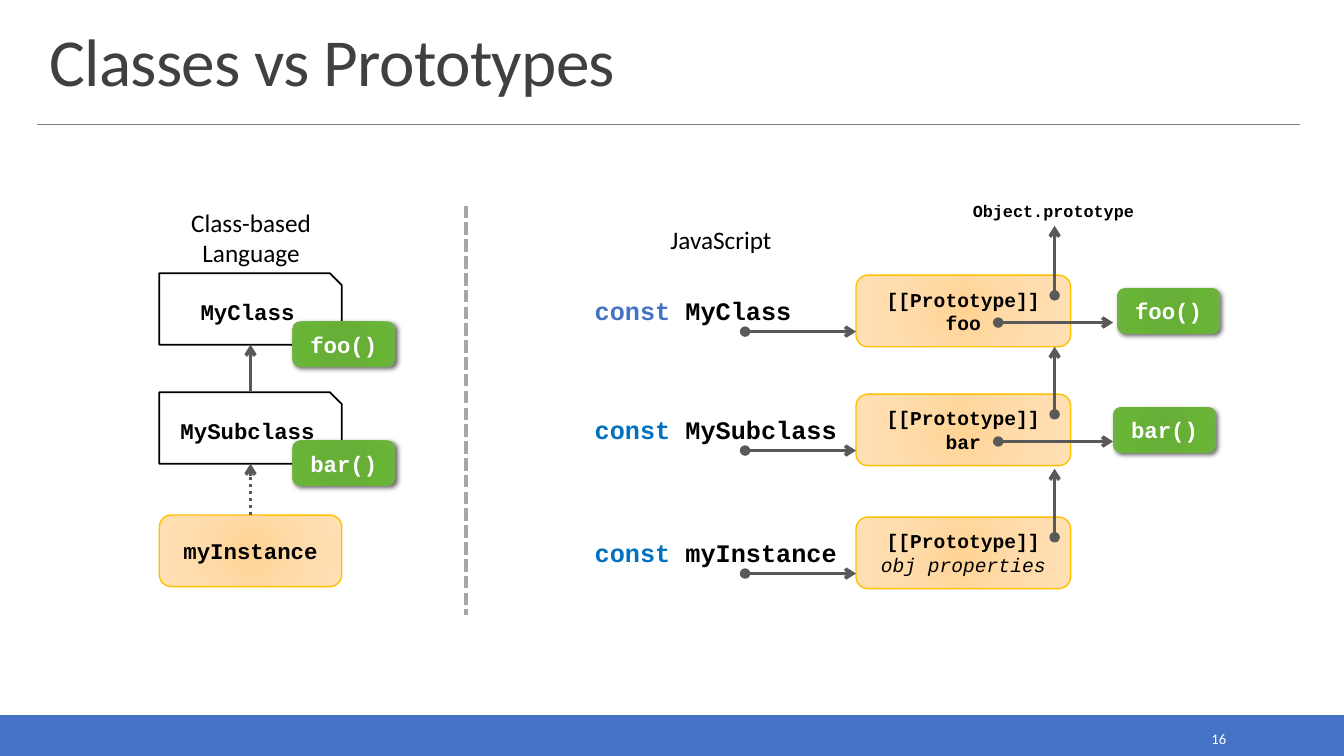
"""Builds a slide that compares classes with prototypes."""
from pptx import Presentation
from pptx.dml.color import RGBColor
from pptx.enum.dml import MSO_LINE_DASH_STYLE as DASH
from pptx.enum.shapes import MSO_CONNECTOR, MSO_SHAPE as SHAPE
from pptx.enum.text import MSO_ANCHOR as ANCHOR, MSO_AUTO_SIZE as FIT, PP_ALIGN as ALIGN
from pptx.oxml import parse_xml
from pptx.oxml.ns import nsdecls, qn
from pptx.util import Inches, Pt
from lxml.etree import SubElement

WIDTH, HEIGHT = 13.33, 7.5
COL = {"class": 1.58, "badge": 2.9, "divider": 4.62, "name": 5.8,
       "ref": 7.39, "object": 8.49, "slot": 9.9, "proto": 10.46, "method": 11.04}
ROWS = (2.71, 3.89, 5.11)
BOX_H, CLASS_W, OBJECT_W = 0.71, 1.81, 2.13
BADGE_W, BADGE_H = 1.02, 0.45

BLUE = RGBColor(0x44, 0x72, 0xC4)
KEYWORD = RGBColor(0x00, 0x70, 0xC0)
GOLD = RGBColor(0xFF, 0xC0, 0x00)
WHITE = RGBColor(0xFF, 0xFF, 0xFF)
BLACK = RGBColor(0x00, 0x00, 0x00)
TITLE = RGBColor(0x40, 0x40, 0x40)
ARROW = RGBColor(0x59, 0x59, 0x59)
RULE = RGBColor(0x80, 0x80, 0x80)
DIVIDER = RGBColor(0xA6, 0xA6, 0xA6)
ORANGE_STOPS = ((0, RGBColor(0xFF, 0xD3, 0x93)), (45, RGBColor(0xFF, 0xDB, 0xA9)),
                (100, RGBColor(0xFF, 0xDF, 0xB4)))
GREEN_STOPS = ((0, RGBColor(0x66, 0xAF, 0x34)), (34, RGBColor(0x67, 0xAF, 0x37)),
               (70, RGBColor(0x68, 0xB4, 0x35)), (100, RGBColor(0x6F, 0xB2, 0x42)))

SANS = {"name": "Calibri", "size": 18, "color": BLACK}
CODE = {"name": "Courier New", "size": 16, "bold": True, "color": BLACK}


def style_font(font, fmt):
    for key, value in fmt.items():
        if key == "color":
            font.color.rgb = value
        else:
            setattr(font, key, Pt(value) if key == "size" else value)


def write(sp, paragraphs, fmt, align=ALIGN.LEFT, **frame):
    """Fill a frame; each paragraph lists (text, format changes) runs."""
    tf = sp.text_frame
    for key, value in frame.items():
        setattr(tf, key, value)
    for i, runs in enumerate(paragraphs):
        p = tf.add_paragraph() if i else tf.paragraphs[0]
        p.alignment = align
        for text, changes in runs:
            if text == "\n":
                p.add_line_break()
                continue
            r = p.add_run()
            r.text = text
            style_font(r.font, fmt | changes)
    return tf


def add_label(s, box, paragraphs, fmt, align=ALIGN.LEFT, **frame):
    frame = frame or {"word_wrap": False, "auto_size": FIT.SHAPE_TO_FIT_TEXT}
    return write(s.shapes.add_textbox(*map(Inches, box)), paragraphs, fmt, align, **frame)


def add_box(s, kind, box, fill=None, line=None, weight=1.25):
    sp = s.shapes.add_shape(kind, *map(Inches, box))
    sp.shadow.inherit = False
    if fill is not None:
        sp.fill.solid()
        sp.fill.fore_color.rgb = fill
    if line is None:
        sp.line.fill.background()
    else:
        sp.line.color.rgb = line
        sp.line.width = Pt(weight)
    return sp


def add_glow(sp, stops):
    """Give the shape a circular gradient."""
    marks = "".join(f'<a:gs pos="{pos * 1000}"><a:srgbClr val="{color}"/></a:gs>'
                    for pos, color in stops)
    edge = " ".join(f'{side}="100000"' for side in "ltrb")
    grad = parse_xml(f'<a:gradFill {nsdecls("a")} rotWithShape="1"><a:gsLst>{marks}</a:gsLst>'
                     f'<a:path path="circle"><a:fillToRect {edge}/></a:path></a:gradFill>')
    sp.element.spPr.find(qn("a:prstGeom")).addnext(grad)


def add_shadow(sp):
    effects = sp.element.spPr.find(qn("a:effectLst"))
    effects.append(parse_xml(
        f'<a:outerShdw {nsdecls("a")} blurRad="{Pt(3.5)}" dist="{Pt(2)}" dir="2700000" '
        'algn="tl" rotWithShape="0"><a:srgbClr val="000000"><a:alpha val="60000"/>'
        '</a:srgbClr></a:outerShdw>'))


def add_line(s, start, end, color=ARROW, weight=2.5, dash=None, head=None, tail=None):
    c = s.shapes.add_connector(MSO_CONNECTOR.STRAIGHT, *map(Inches, start + end))
    c.line.color.rgb = color
    c.line.width = Pt(weight)
    if dash:
        c.line.dash_style = dash
    spPr = c.element.spPr
    for tag, kind in (("a:headEnd", head), ("a:tailEnd", tail)):
        if kind:
            SubElement(spPr.find(qn("a:ln")), qn(tag), type=kind)
    SubElement(spPr, qn("a:effectLst"))


def add_pointer(s, start, end):
    add_line(s, start, end, head="oval", tail="arrow")


def add_class(s, top, name):
    sp = add_box(s, SHAPE.SNIP_1_RECTANGLE, (COL["class"], top, CLASS_W, BOX_H), WHITE, BLACK)
    write(sp, [[(name, {})]], CODE, ALIGN.CENTER, vertical_anchor=ANCHOR.MIDDLE)


def add_object(s, left, top, width, paragraphs, size):
    sp = add_box(s, SHAPE.ROUNDED_RECTANGLE, (left, top, width, BOX_H), line=GOLD, weight=1)
    add_glow(sp, ORANGE_STOPS)
    write(sp, paragraphs, CODE | {"size": size}, ALIGN.CENTER, vertical_anchor=ANCHOR.MIDDLE)


def add_method(s, left, top, name):
    sp = add_box(s, SHAPE.ROUNDED_RECTANGLE, (left, top, BADGE_W, BADGE_H))
    add_glow(sp, GREEN_STOPS)
    add_shadow(sp)
    write(sp, [[(name, {})]], CODE | {"color": WHITE}, ALIGN.CENTER,
          vertical_anchor=ANCHOR.MIDDLE)


def add_layout(s):
    """Draw the title, its rule and the footer band."""
    add_box(s, SHAPE.RECTANGLE, (0, 7.1, WIDTH, 0.4), BLUE, BLUE)
    add_line(s, (0.37, 1.23), (12.89, 1.23), RULE, 0.5)
    tf = add_label(s, (0.39, 0.2, 12.52, 0.84), [[("Classes vs Prototypes", {})]],
                   SANS | {"size": 48, "color": TITLE},
                   word_wrap=True, vertical_anchor=ANCHOR.BOTTOM)
    p = tf.paragraphs[0]
    p.line_spacing = 0.85
    p.runs[0].font._element.set("spc", "-50")
    add_label(s, (10.83, 7.19, 1.43, 0.28), [[("16", {})]],
              SANS | {"size": 10.5, "color": WHITE}, ALIGN.RIGHT,
              word_wrap=True, vertical_anchor=ANCHOR.MIDDLE)


def add_class_side(s):
    """Draw the class-based half."""
    add_label(s, (1.63, 2.01, 1.72, 0.71),
              [[("Class-based", {}), ("\n", {}), ("Language", {})]], SANS, ALIGN.CENTER)
    add_object(s, COL["class"], ROWS[2], CLASS_W, [[("myInstance", {})]], 16)
    for top, name in zip(ROWS, ("MyClass", "MySubclass")):
        add_class(s, top, name)
    mid = COL["class"] + CLASS_W / 2
    for upper, lower, dash in zip(ROWS, ROWS[1:], (None, DASH.ROUND_DOT)):
        add_line(s, (mid, lower), (mid, upper + BOX_H), dash=dash, tail="arrow")
    for top, name in zip(ROWS, ("foo()", "bar()")):
        add_method(s, COL["badge"], top + 0.48, name)


def add_prototype_side(s):
    """Draw the prototype chain half."""
    add_label(s, (6.55, 2.18, 1.39, 0.4), [[("JavaScript", {})]], SANS)
    add_label(s, (9.55, 1.94, 1.83, 0.3), [[("Object.prototype", {})]], CODE | {"size": 12})
    plain = {"bold": False, "italic": True}
    chain = (("MyClass", BLUE, 2.16, "foo", {}, 2.24),
             ("MySubclass", KEYWORD, 2.61, "bar", {}, 3.44),
             ("myInstance", KEYWORD, 2.61, "obj properties", plain, 4.65))
    for top, (name, color, width, member, changes, target) in zip(ROWS, chain):
        add_object(s, COL["object"], top + 0.02, OBJECT_W,
                   [[("[[Prototype]]", {})], [(member, changes)]], 14)
        add_pointer(s, (COL["proto"], top + 0.22), (COL["proto"], target))
        add_label(s, (COL["name"], top + 0.17, width, 0.4),
                  [[("const ", {"color": color}), (name, {})]], CODE | {"size": 18})
        add_pointer(s, (COL["ref"], top + 0.58), (COL["object"], top + 0.58))
    for top, name, shift in zip(ROWS, ("foo()", "bar()"), (0.04, 0)):
        add_method(s, COL["method"] + shift, top + 0.15, name)
        add_pointer(s, (COL["slot"], top + 0.49), (COL["method"], top + 0.49))


def main():
    prs = Presentation()
    prs.slide_width, prs.slide_height = Inches(WIDTH), Inches(HEIGHT)
    s = prs.slides.add_slide(prs.slide_layouts[6])
    add_layout(s)
    add_class_side(s)
    add_line(s, (COL["divider"], 2.04), (COL["divider"], 6.1), DIVIDER, 3, DASH.SQUARE_DOT)
    add_prototype_side(s)
    prs.save("out.pptx")


if __name__ == "__main__":
    main()
